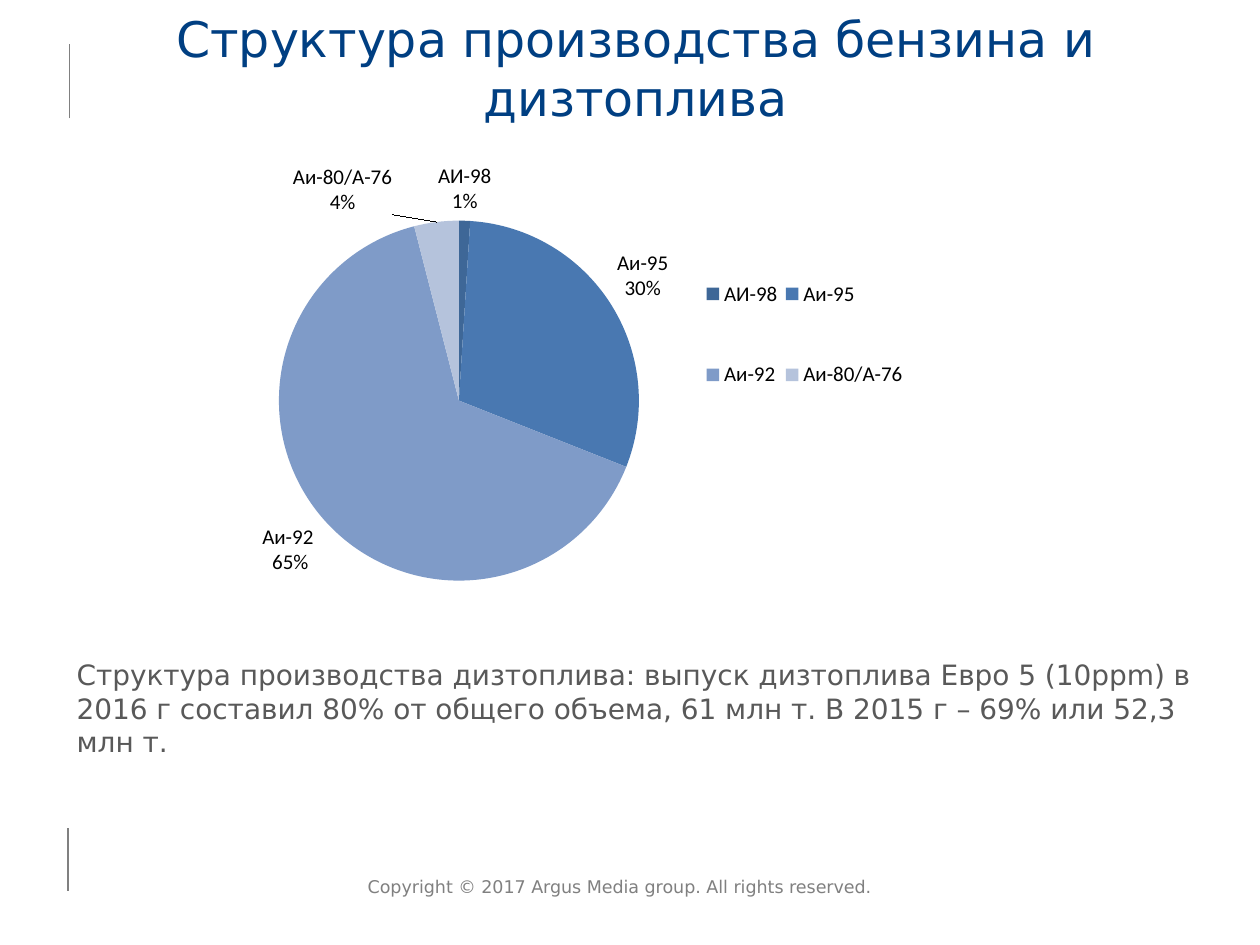
"""Build a slide on the structure of petrol and diesel production."""
from dataclasses import dataclass

from lxml import etree
from pptx import Presentation
from pptx.chart.data import CategoryChartData
from pptx.dml.color import RGBColor
from pptx.enum.chart import XL_CHART_TYPE as ChartType
from pptx.enum.chart import XL_LABEL_POSITION as LabelPosition
from pptx.enum.chart import XL_LEGEND_POSITION as LegendPosition
from pptx.enum.shapes import MSO_CONNECTOR as Connector
from pptx.enum.text import MSO_ANCHOR as Anchor
from pptx.enum.text import PP_ALIGN as Align
from pptx.oxml import parse_xml
from pptx.oxml.ns import nsdecls, qn
from pptx.util import Inches, Pt


@dataclass(frozen=True)
class Caption:
    text: str
    box: tuple[float, float, float, float]
    size: int
    color: str
    align: Align = Align.LEFT
    anchor: Anchor = Anchor.TOP
    padded: bool = True


@dataclass(frozen=True)
class Rule:
    left: float
    top: float
    bottom: float


@dataclass(frozen=True)
class Grade:
    name: str
    share: int
    color: str


CAPTIONS = (
    Caption("Структура производства бензина и дизтоплива", (0.67, 0.33, 8.75, 0.67),
            28, "003F82", Align.CENTER, Anchor.BOTTOM, False),
    Caption("Структура производства дизтоплива: выпуск дизтоплива Евро 5 (10ppm) в 2016 г "
            "составил 80% от общего объема, 61 млн т. В 2015 г – 69% или 52,3 млн т.",
            (0.51, 5.17, 9.29, 0.91), 16, "595959"),
    Caption("Copyright © 2017 Argus Media group. All rights reserved.",
            (2.82, 6.9, 5, 0.27), 10, "808080"),
)
RULES = (Rule(0.55, 0.35, 0.94), Rule(0.54, 6.57, 7.07))
GRADES = (
    Grade("АИ-98", 1, "3E6797"),
    Grade("Аи-95", 30, "4978B1"),
    Grade("Аи-92 ", 65, "7F9BC8"),
    Grade("Аи-80/А-76", 4, "B5C3DC"),
)


def rgb(color: str) -> RGBColor:
    """Turn a hex string into a colour."""
    return RGBColor.from_string(color)


def set_font(font, name: str, size: int, color: str) -> None:
    """Apply a typeface, size and colour to a font."""
    for attribute, value in {"name": name, "size": Pt(size)}.items():
        setattr(font, attribute, value)
    font.color.rgb = rgb(color)


def add_caption(slide, caption: Caption) -> None:
    """Draw one wrapped text box."""
    frame = slide.shapes.add_textbox(*map(Inches, caption.box)).text_frame
    settings = {"word_wrap": True, "vertical_anchor": caption.anchor}
    if not caption.padded:
        sides = ("left", "top", "right", "bottom")
        settings |= {f"margin_{side}": Inches(0) for side in sides}
    for attribute, value in settings.items():
        setattr(frame, attribute, value)
    paragraph = frame.paragraphs[0]
    paragraph.alignment = caption.align
    run = paragraph.add_run()
    run.text = caption.text
    set_font(run.font, "DejaVu Sans", caption.size, caption.color)


def add_rule(slide, rule: Rule) -> None:
    """Draw one thin vertical rule without a shadow."""
    left = Inches(rule.left)
    line = slide.shapes.add_connector(
        Connector.STRAIGHT, left, Inches(rule.bottom), left, Inches(rule.top))
    line.line.color.rgb = rgb("808080")
    line.line.width = Pt(0.75)
    etree.SubElement(line._element.spPr, qn("a:effectLst"))


def manual_layout(target: str = "", **values: float):
    """Return a chart layout element with the given fractions."""
    edges = "" if not target else '<c:xMode val="edge"/><c:yMode val="edge"/>'
    inner = '<c:layoutTarget val="inner"/>' if target == "inner" else ""
    numbers = "".join(f'<c:{key} val="{value}"/>' for key, value in values.items())
    return parse_xml(f'<c:layout {nsdecls("c")}><c:manualLayout>{inner}{edges}{numbers}'
                     "</c:manualLayout></c:layout>")


def place(parent, layout, before: str) -> None:
    """Put a layout ahead of the named child, replacing any present one."""
    for present in parent.findall(qn("c:layout")):
        parent.remove(present)
    parent.find(qn(before)).addprevious(layout)


def add_pie(slide, grades: tuple[Grade, ...]) -> None:
    """Draw the pie chart of petrol grades."""
    data = CategoryChartData()
    data.categories = [grade.name for grade in grades]
    data.add_series("Series 1", [grade.share for grade in grades])
    box = map(Inches, (0.83, 1.15, 6.86, 3.76))
    chart = slide.shapes.add_chart(ChartType.PIE, *box, data).chart
    set_font(chart.font, "Calibri", 10, "000000")
    chart.has_title = False
    chart.has_legend = True
    chart.legend.position = LegendPosition.RIGHT
    chart.legend.include_in_layout = False
    set_font(chart.legend.font, "Calibri", 12, "000000")
    plot = chart.plots[0]
    plot.vary_by_categories = True
    series = plot.series[0]
    for index, grade in enumerate(grades):
        fill = series.points[index].format.fill
        fill.solid()
        fill.fore_color.rgb = rgb(grade.color)
    labels = series.data_labels
    settings = {"show_percentage": True, "show_category_name": True, "show_value": False,
                "show_legend_key": False, "position": LabelPosition.OUTSIDE_END,
                "number_format": "0%", "number_format_is_linked": False}
    for attribute, value in settings.items():
        setattr(labels, attribute, value)
    set_font(labels.font, "Calibri", 12, "000000")
    separator = parse_xml(f'<c:separator {nsdecls("c")}>\n</c:separator>')
    labels._element.find(qn("c:showBubbleSize")).addnext(separator)
    moved = parse_xml(
        f'<c:dLbl {nsdecls("c")}><c:idx val="{len(grades) - 1}"/>'
        '<c:dLblPos val="outEnd"/><c:showLegendKey val="0"/><c:showVal val="0"/>'
        '<c:showCatName val="1"/><c:showSerName val="0"/><c:showPercent val="1"/>'
        '<c:showBubbleSize val="0"/><c:separator>\n</c:separator></c:dLbl>')
    place(moved, manual_layout(x=-0.05, y=0), "c:dLblPos")
    labels._element.insert(0, moved)
    place(chart._chartSpace.chart.plotArea,
          manual_layout("inner", x=0.2, y=0.16, w=0.42, h=0.76), "c:pieChart")
    place(chart.legend._element,
          manual_layout("outer", x=0.69, y=0.17, w=0.24, h=0.46), "c:overlay")


def main() -> None:
    """Assemble and save the slide."""
    presentation = Presentation()
    presentation.slide_width = Inches(10)
    presentation.slide_height = Inches(7.5)
    slide = presentation.slides.add_slide(presentation.slide_layouts[6])
    for rule in RULES:
        add_rule(slide, rule)
    add_pie(slide, GRADES)
    for caption in CAPTIONS:
        add_caption(slide, caption)
    presentation.save("out.pptx")


if __name__ == "__main__":
    main()
